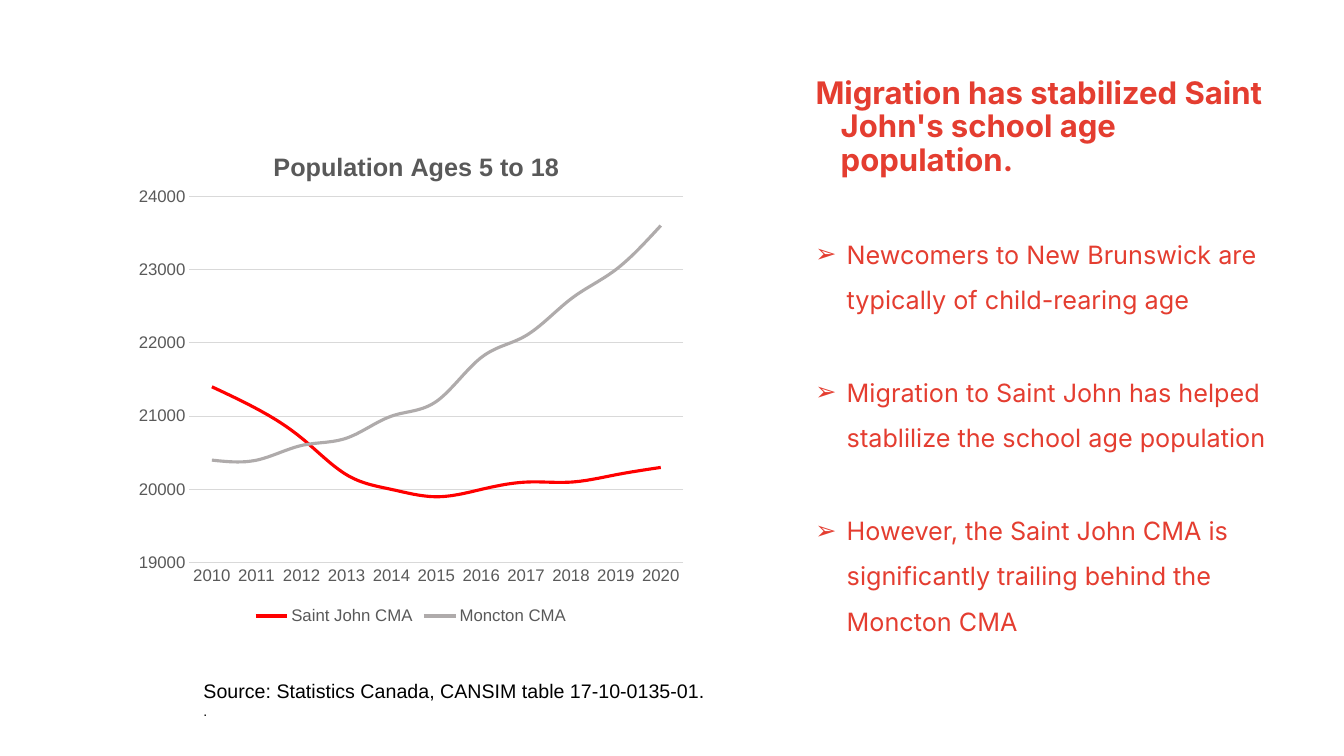
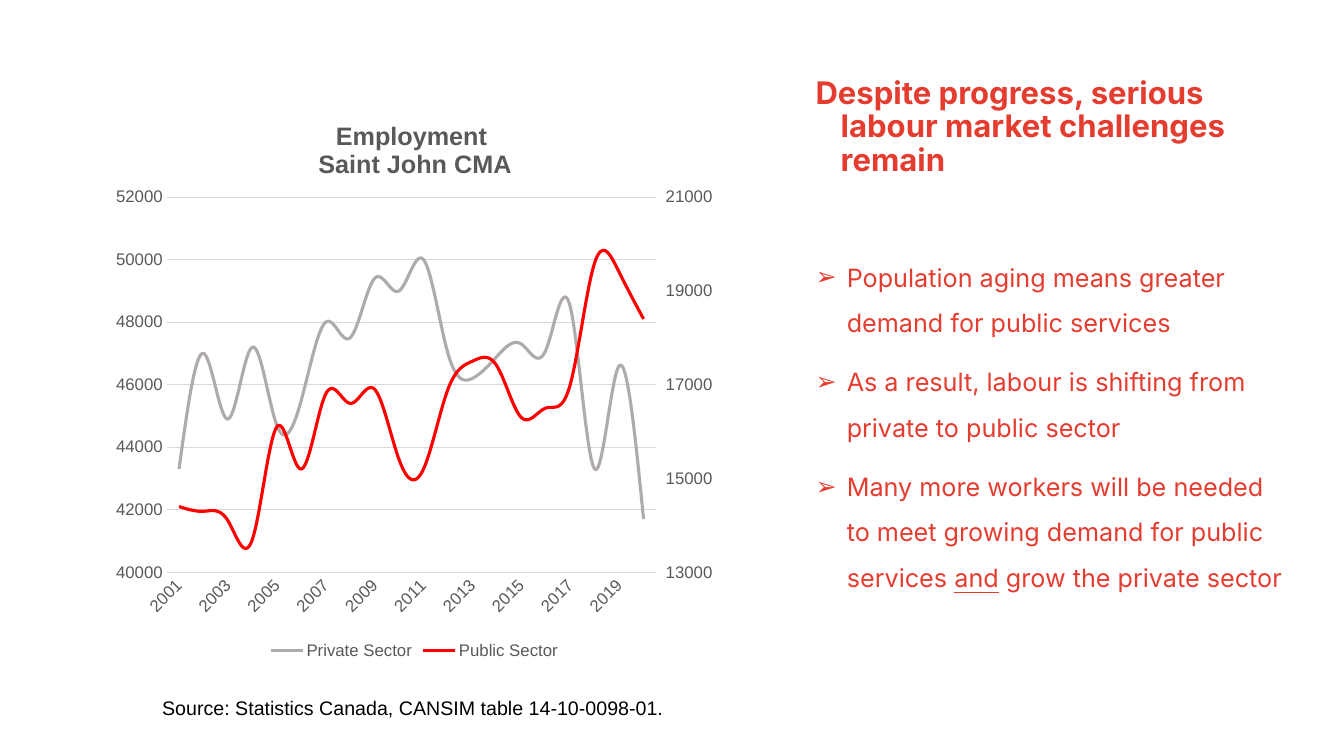
from copy import deepcopy
from dataclasses import dataclass

from lxml.etree import SubElement
from pptx import Presentation
from pptx.chart.axis import ValueAxis
from pptx.chart.data import CategoryChartData
from pptx.dml.color import RGBColor
from pptx.enum.chart import XL_CHART_TYPE, XL_LEGEND_POSITION, XL_TICK_MARK
from pptx.enum.text import MSO_AUTO_SIZE
from pptx.oxml import parse_xml
from pptx.oxml.ns import nsdecls, qn
from pptx.util import Inches, Pt


@dataclass(frozen=True)
class Theme:
    """Colours, fonts and type sizes shared by the slides."""
    accent: RGBColor = RGBColor(0xE4, 0x3D, 0x30)
    black: RGBColor = RGBColor(0, 0, 0)
    label: RGBColor = RGBColor(0x59, 0x59, 0x59)
    rule: RGBColor = RGBColor(0xD9, 0xD9, 0xD9)
    red: RGBColor = RGBColor(0xFF, 0, 0)
    grey: RGBColor = RGBColor(0xAF, 0xAB, 0xAB)
    text_font: str = "Inter"
    chart_font: str = "Arial"
    title_size: float = 22.2
    bullet_size: float = 18
    source_size: float = 14
    dot_size: float = 10
    chart_title_size: float = 18
    label_size: float = 12


THEME = Theme()
TITLE = {"name": THEME.text_font, "size": Pt(THEME.title_size), "bold": True}
BULLET = {"name": THEME.text_font, "size": Pt(THEME.bullet_size)}
SOURCE = {"name": THEME.chart_font, "size": Pt(THEME.source_size)}
DOT = {**SOURCE, "size": Pt(THEME.dot_size)}
LABEL = {"name": THEME.chart_font, "size": Pt(THEME.label_size), "bold": False}
CHART_TITLE = {**LABEL, "size": Pt(THEME.chart_title_size), "bold": True}


def set_values(target, values):
    """Set each named attribute of the target."""
    for name, value in values.items():
        setattr(target, name, value)


def style_font(font, values, color):
    """Apply format values and a colour to a font."""
    set_values(font, values)
    font.color.rgb = color


def add_text_frame(slide, box):
    """Add a wrapping text box and return its text frame."""
    frame = slide.shapes.add_textbox(*map(Inches, box)).text_frame
    frame.word_wrap = True
    return frame


def next_paragraph(frame, index):
    """Return the first paragraph or append another."""
    return frame.add_paragraph() if index else frame.paragraphs[0]


def add_run(paragraph, text, values, color):
    """Add a formatted run to a paragraph."""
    run = paragraph.add_run()
    run.text = text
    style_font(run.font, values, color)


def hang(paragraph, left, first):
    """Give a paragraph a hanging indent in inches."""
    properties = paragraph._p.get_or_add_pPr()
    properties.set("marL", str(Inches(left)))
    properties.set("indent", str(Inches(first)))
    return properties


def add_title(slide, text):
    """Add the slide title with its hanging indent."""
    paragraph = add_text_frame(slide, (7.74, 0.72, 5.09, 1.23)).paragraphs[0]
    hang(paragraph, 0.5, -0.25)
    paragraph.line_spacing = 0.9
    add_run(paragraph, text, TITLE, THEME.accent)


def add_bullets(slide, box, bullets, gap):
    """Add arrow bullets, each a list of text and format pairs."""
    frame = add_text_frame(slide, box)
    for index, runs in enumerate(bullets):
        paragraph = next_paragraph(frame, index)
        properties = hang(paragraph, 0.56, -0.31)
        color = SubElement(properties, qn("a:buClr"))
        SubElement(color, qn("a:srgbClr"), val=str(THEME.accent))
        SubElement(properties, qn("a:buFont"), typeface=THEME.chart_font)
        SubElement(properties, qn("a:buChar"), char="➢")
        set_values(paragraph, {"line_spacing": 1.5,
                               "space_before": Pt(gap if index else 0)})
        for text, values in runs:
            add_run(paragraph, text, {**BULLET, **values}, THEME.accent)


def add_source(slide, box, lines):
    """Add the source note, one paragraph for each text and format pair."""
    frame = add_text_frame(slide, box)
    frame.auto_size = MSO_AUTO_SIZE.SHAPE_TO_FIT_TEXT
    for index, (text, values) in enumerate(lines):
        add_run(next_paragraph(frame, index), text, values, THEME.black)


def set_layout(parent, index, fractions, inner=False):
    """Place a chart part by fractions of the chart area."""
    for layout in parent.findall(qn("c:layout")):
        parent.remove(layout)
    layout = parse_xml(f"<c:layout {nsdecls('c')}><c:manualLayout/></c:layout>")
    manual = layout[0]
    if inner:
        SubElement(manual, qn("c:layoutTarget"), val="inner")
    for name in ("xMode", "yMode"):
        SubElement(manual, qn(f"c:{name}"), val="edge")
    for name, value in zip("xywh", fractions):
        SubElement(manual, qn(f"c:{name}"), val=str(value))
    parent.insert(index, layout)


def style_axes(chart, scale):
    """Format the category and value axes."""
    for axis in (chart.category_axis, chart.value_axis):
        set_values(axis, {"major_tick_mark": XL_TICK_MARK.NONE,
                          "minor_tick_mark": XL_TICK_MARK.NONE})
        style_font(axis.tick_labels.font, LABEL, THEME.label)
    axis = chart.value_axis
    set_values(axis, scale)
    set_values(axis.tick_labels, {"number_format": "0",
                                  "number_format_is_linked": False})
    axis.format.line.fill.background()
    for line in (chart.category_axis.format.line, axis.major_gridlines.format.line):
        line.color.rgb = THEME.rule
        line.width = Pt(0.75)


def add_line_chart(slide, box, title, title_at, plot_at, years, series, scale):
    """Add a smoothed line chart; series maps a name to colour and values."""
    data = CategoryChartData(number_format="0")
    data.categories = [str(year) for year in years]
    for name, (_, values) in series.items():
        data.add_series(name, values)
    chart = slide.shapes.add_chart(
        XL_CHART_TYPE.LINE, *map(Inches, box), data).chart
    style_font(chart.font, LABEL, THEME.label)
    chart.has_title = True
    frame = chart.chart_title.text_frame
    frame.text = title
    for paragraph in frame.paragraphs:
        for run in paragraph.runs:
            style_font(run.font, CHART_TITLE, THEME.label)
    chart.has_legend = True
    set_values(chart.legend, {"position": XL_LEGEND_POSITION.BOTTOM,
                              "include_in_layout": False})
    style_font(chart.legend.font, LABEL, THEME.label)
    style_axes(chart, scale)
    plot = chart.plots[0]
    plot.vary_by_categories = False
    for line_series, (color, _) in zip(plot.series, series.values()):
        line_series.smooth = True
        line_series.format.line.color.rgb = color
        line_series.format.line.width = Pt(2.25)
    set_layout(chart.chart_title._element, 1, title_at)
    set_layout(chart._chartSpace.chart.plotArea, 0, plot_at, inner=True)
    return chart


def slant_years(axis, step):
    """Turn the category labels upward and show every nth one."""
    element = axis._element
    element.find(f"{qn('c:txPr')}/{qn('a:bodyPr')}").set("rot", "-2700000")
    skip = parse_xml(f'<c:tickLblSkip {nsdecls("c")} val="{step}"/>')
    element.find(qn("c:noMultiLvlLbl")).addprevious(skip)


def move_last_series_right(chart, scale):
    """Draw the last series against a second value axis on the right."""
    left_plot = chart.plots[0]._element
    right_plot = deepcopy(left_plot)
    left_plot.remove(left_plot.findall(qn("c:ser"))[-1])
    for series in right_plot.findall(qn("c:ser"))[:-1]:
        right_plot.remove(series)
    left_plot.addnext(right_plot)
    category_axis = deepcopy(chart.category_axis._element)
    value_axis = deepcopy(chart.value_axis._element)
    category_id, value_id = "50010", "50020"
    for element, own, other in ((category_axis, category_id, value_id),
                                (value_axis, value_id, category_id)):
        element.find(qn("c:axId")).set("val", own)
        element.find(qn("c:crossAx")).set("val", other)
    for reference, own in zip(right_plot.findall(qn("c:axId")),
                              (category_id, value_id)):
        reference.set("val", own)
    category_axis.find(qn("c:delete")).set("val", "1")
    value_axis.find(qn("c:axPos")).set("val", "r")
    value_axis.find(qn("c:crosses")).set("val", "max")
    chart.value_axis._element.addnext(value_axis)
    value_axis.addnext(category_axis)
    set_values(ValueAxis(value_axis), {"has_major_gridlines": False,
                                       "major_tick_mark": XL_TICK_MARK.OUTSIDE,
                                       **scale})


def build_population_slide(slide):
    """Build the slide on the school age population."""
    add_title(slide, "Migration has stabilized Saint John's school age population.")
    add_bullets(slide, (7.74, 2.17, 5.27, 4.78), [
        [("Newcomers to New Brunswick are typically of child-rearing age", {})],
        [("Migration to Saint John has helped stablilize the school age population", {})],
        [("However, the Saint John CMA is significantly trailing behind the "
          "Moncton CMA", {})],
    ], gap=34)
    add_source(slide, (1.92, 6.69, 9.36, 0.5), [
        ("Source: Statistics Canada, CANSIM table 17-10-0135-01.", SOURCE),
        (".", DOT),
    ])
    add_line_chart(
        slide, (1.26, 1.19, 5.63, 5.05), "Population Ages 5 to 18",
        (0.25, 0.05), (0.11, 0.15, 0.87, 0.72), range(2010, 2021),
        {"Saint John CMA": (THEME.red, (
            21400, 21100, 20700, 20200, 20000, 19900,
            20000, 20100, 20100, 20200, 20300)),
         "Moncton CMA": (THEME.grey, (
             20400, 20400, 20600, 20700, 21000, 21200,
             21800, 22100, 22600, 23000, 23600))},
        {"minimum_scale": 19000, "maximum_scale": 24000, "major_unit": 1000})


def build_employment_slide(slide):
    """Build the slide on employment by sector."""
    add_title(slide, "Despite progress, serious labour market challenges remain")
    add_source(slide, (1.51, 6.85, 9.05, 0.34), [
        ("Source: Statistics Canada, CANSIM table 14-10-0098-01.", SOURCE),
    ])
    chart = add_line_chart(
        slide, (1.04, 0.94, 6.14, 5.64), "Employment \nSaint John CMA",
        (0.34, 0.04), (0.1, 0.18, 0.79, 0.66), range(2001, 2021),
        {"Private Sector": (THEME.grey, (
            43300, 47000, 44900, 47200, 44700, 45500, 48000, 47500, 49400, 49000,
            50000, 47000, 46200, 46900, 47300, 47100, 48500, 43300, 46600, 41700)),
         "Public Sector": (THEME.red, (
             14400, 14300, 14100, 13700, 16100, 15200, 16800, 16600, 16900, 15400,
             15200, 16900, 17500, 17400, 16300, 16500, 17000, 19600, 19400, 18400))},
        {"minimum_scale": 40000, "maximum_scale": 52000, "major_unit": 2000})
    slant_years(chart.category_axis, 2)
    move_last_series_right(chart, {"minimum_scale": 13000, "maximum_scale": 21000,
                                   "major_unit": 2000})
    add_bullets(slide, (7.74, 2.4, 5.09, 4.33), [
        [("Population aging means greater demand for public services", {})],
        [("As a result, labour is shifting from private to public sector", {})],
        [("Many more workers will be needed to meet growing demand for public "
          "services ", {}),
         ("and", {"underline": True}),
         (" grow the private sector", {})],
    ], gap=10)


def main():
    """Build and save the presentation."""
    presentation = Presentation()
    set_values(presentation, {"slide_width": Inches(13.33),
                              "slide_height": Inches(7.5)})
    for build in (build_population_slide, build_employment_slide):
        build(presentation.slides.add_slide(presentation.slide_layouts[6]))
    presentation.save("out.pptx")


if __name__ == "__main__":
    main()
